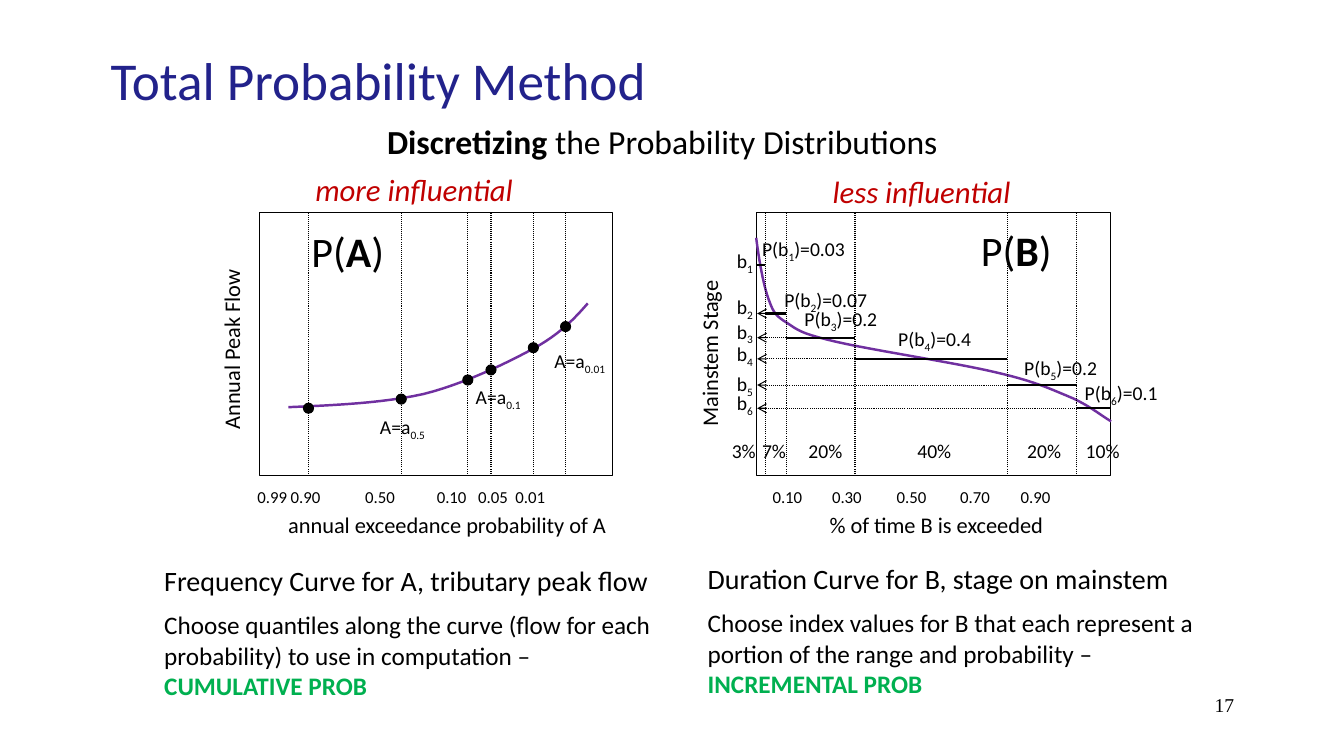
from lxml import etree
from pptx import Presentation
from pptx.dml.color import RGBColor
from pptx.enum.dml import MSO_LINE
from pptx.enum.shapes import MSO_CONNECTOR, MSO_SHAPE
from pptx.enum.text import MSO_ANCHOR, PP_ALIGN
from pptx.oxml.ns import qn
from pptx.util import Inches, Pt

STRAIGHT = MSO_CONNECTOR.STRAIGHT
RECT, OVAL = MSO_SHAPE.RECTANGLE, MSO_SHAPE.OVAL
DOTTED = MSO_LINE.ROUND_DOT
MIDDLE = MSO_ANCHOR.MIDDLE
LEFT, CENTER, RIGHT = PP_ALIGN.LEFT, PP_ALIGN.CENTER, PP_ALIGN.RIGHT
BLACK = RGBColor(0x00, 0x00, 0x00)
NAVY = RGBColor(0x22, 0x22, 0x8B)
RED = RGBColor(0xC0, 0x00, 0x00)
GREEN = RGBColor(0x00, 0xB0, 0x50)
PURPLE = RGBColor(0x70, 0x30, 0xA0)

AX, BX, TOP = 2.57, 7.5, 2.11
PLOT_W, PLOT_H = 3.51, 2.61
BOTTOM = TOP + PLOT_H
DOT = 0.1

prs = Presentation()
prs.slide_width, prs.slide_height = Inches(13.33), Inches(7.5)
s = prs.slides.add_slide(prs.slide_layouts[6])


def text(x, y, w, h, size, runs, color=BLACK, align=LEFT, font="Calibri"):
    sp = s.shapes.add_textbox(Inches(x), Inches(y), Inches(w), Inches(h))
    tf = sp.text_frame
    tf.word_wrap = True
    p = tf.paragraphs[0]
    p.alignment = align
    for words, style in runs:
        r = p.add_run()
        r.text = words
        r.font.name, r.font.size = font, Pt(size)
        r.font.color.rgb = color
        if style == "bold":
            r.font.bold = True
        elif style == "italic":
            r.font.italic = True
        elif style == "sub":
            r._r.get_or_add_rPr().set("baseline", "-25000")
    return sp


def line(x1, y1, x2, y2, width=0.75, dash=None, arrow=False):
    c = s.shapes.add_connector(STRAIGHT, Inches(x1), Inches(y1), Inches(x2), Inches(y2))
    c.line.color.rgb, c.line.width = BLACK, Pt(width)
    if dash:
        c.line.dash_style = dash
    if arrow:
        etree.SubElement(c.line._get_or_add_ln(), qn("a:tailEnd"), type="arrow")
    etree.SubElement(c._element.spPr, qn("a:effectLst"))


sp = text(1, 0.16, 11.33, 1.25, 38, [("Total Probability Method", "")], NAVY)
sp.text_frame.vertical_anchor = MIDDLE
text(3.74, 1.15, 6.09, 0.5, 24,
     [("Discretizing", "bold"), (" the Probability Distributions", "")])
text(3.03, 1.64, 2.7, 0.47, 22, [("more influential", "italic")], RED)
text(8.16, 1.66, 2.7, 0.47, 22, [("less influential", "italic")], RED)

curve_a = [(2.86, 4.04), (3.33, 4.02), (3.79, 4), (4.2, 3.91), (4.6, 3.81),
           (5.01, 3.61), (5.29, 3.46), (5.56, 3.31), (5.7, 3.16), (5.83, 3.01)]
curve_b = [(7.5, 2.36), (7.53, 2.59), (7.57, 2.82), (7.62, 2.96), (7.67, 3.1),
           (7.69, 3.13), (7.8, 3.2), (7.92, 3.28), (7.95, 3.31), (8.29, 3.39),
           (8.63, 3.47), (9.48, 3.6), (9.86, 3.69), (10.25, 3.78), (10.4, 3.85),
           (10.59, 3.93), (10.79, 4.01), (10.93, 4.13), (11.02, 4.18)]
STEPS = 12
for plot_x, knots in ((AX, curve_a), (BX, curve_b)):
    sp = s.shapes.add_shape(RECT, Inches(plot_x), Inches(TOP), Inches(PLOT_W), Inches(PLOT_H))
    sp.shadow.inherit = False
    sp.fill.background()
    sp.line.color.rgb, sp.line.width = BLACK, Pt(0.75)

    points = []
    for i in range(0, len(knots) - 1, 3):
        for k in range(1, STEPS + 1):
            t = k / STEPS
            weights = ((1 - t) ** 3, 3 * t * (1 - t) ** 2, 3 * t * t * (1 - t), t ** 3)
            points.append([Inches(sum(wt * knot[axis] for wt, knot in zip(weights, knots[i:i + 4])))
                           for axis in (0, 1)])
    fb = s.shapes.build_freeform(Inches(knots[0][0]), Inches(knots[0][1]))
    fb.add_line_segments(points, close=False)
    sp = fb.convert_to_shape()
    sp.shadow.inherit = False
    sp.fill.background()
    sp.line.color.rgb, sp.line.width = PURPLE, Pt(1.75)

for x, y in ((3.06, 4.05), (3.98, 3.96), (4.64, 3.77), (4.87, 3.67), (5.29, 3.45), (5.61, 3.24)):
    line(x, BOTTOM, x, TOP, dash=DOTTED)
    sp = s.shapes.add_shape(OVAL, Inches(x - DOT / 2), Inches(y - DOT / 2), Inches(DOT), Inches(DOT))
    sp.shadow.inherit = False
    sp.fill.solid()
    sp.fill.fore_color.rgb = BLACK
    sp.line.color.rgb, sp.line.width = BLACK, Pt(0.75)

for x, y, quantile in ((3.67, 4.07, "0.5"), (4.62, 3.77, "0.1"), (5.4, 3.41, "0.01")):
    text(x, y, 1.16, 0.33, 14, [("A=a", ""), (quantile, "sub")])

bands = [
    (7.59, 2.63, 2.42, "0.03", 7.46, 2.3, "3%", 7.16),
    (7.8, 3.11, 2.88, "0.07", 7.68, 2.81, "7%", 7.46),
    (8.48, 3.35, 3.12, "0.2", 7.88, 3, "20%", 7.92),
    (9.99, 3.56, 3.34, "0.4", 8.81, 3.19, "40%", 9),
    (10.68, 3.82, 3.64, "0.2", 10.06, 3.48, "20%", 10.09),
    (BX + PLOT_W, 4.05, 3.83, "0.1", 10.66, 3.73, "10%", 10.67),
]
start = BX
for n, (end, level, index_y, prob, prob_x, prob_y, share, share_x) in enumerate(bands, 1):
    line(start, level, end, level, 1.5)
    if n > 1:
        line(start, BOTTOM, start, TOP, dash=DOTTED)
        line(start, level, BX + 0.01, level, dash=DOTTED, arrow=True)
    text(7.21, index_y, 0.44, 0.33, 14, [("b", ""), (str(n), "sub")])
    text(prob_x, prob_y, 1.35, 0.33, 14, [("P(b", ""), (str(n), "sub"), (f")={prob}", "")])
    text(share_x, 4.31, 0.67, 0.33, 14, [(share, "")])
    start = end

for x, y, event in ((2.99, 2.19, "A"), (9.63, 2.18, "B")):
    text(x, y, 1.56, 0.6, 30, [("P(", ""), (event, "bold"), (")", "")])

ticks = [(2.7, "0.99"), (3.03, "0.90"), (3.77, "0.50"), (4.48, "0.10"), (4.89, "0.05"),
         (5.26, "0.01"), (7.81, "0.10"), (8.4, "0.30"), (9.04, "0.50"), (9.67, "0.70"),
         (10.27, "0.90")]
for x, tick in ticks:
    text(x - 0.35, 4.78, 0.7, 0.3, 12, [(tick, "")], align=CENTER)

text(2.76, 5.02, 3.55, 0.37, 16, [("annual exceedance probability of A", "")])
text(8.13, 5.02, 2.8, 0.37, 16, [("% of time B is exceeded", "")])
for x, y, w, label in ((1.12, 3, 2.35, "Annual Peak Flow"), (6.04, 3.15, 1.99, "Mainstem Stage")):
    text(x, y, w, 0.37, 16, [(label, "")]).rotation = 270

notes = [
    (1.53, 5.54, "Frequency Curve for A, tributary peak flow",
     "Choose quantiles along the curve (flow for each probability) to use in computation – ",
     "CUMULATIVE PROB"),
    (6.92, 5.52, "Duration Curve for B, stage on mainstem",
     "Choose index values for B that each represent a portion of the range and probability – ",
     "INCREMENTAL PROB"),
]
for x, y, heading, advice, kind in notes:
    tf = text(x, y, 5.08, 1.5, 20, [(heading, "")]).text_frame
    p = tf.add_paragraph()
    p.space_before = Pt(9)
    for words, color, bold in ((advice, BLACK, False), (kind, GREEN, True)):
        r = p.add_run()
        r.text = words
        r.font.name, r.font.size, r.font.bold = "Calibri", Pt(18), bold
        r.font.color.rgb = color

text(9.56, 6.83, 2.78, 0.5, 14, [("17", "")], align=RIGHT, font="Times New Roman")

prs.save("out.pptx")
